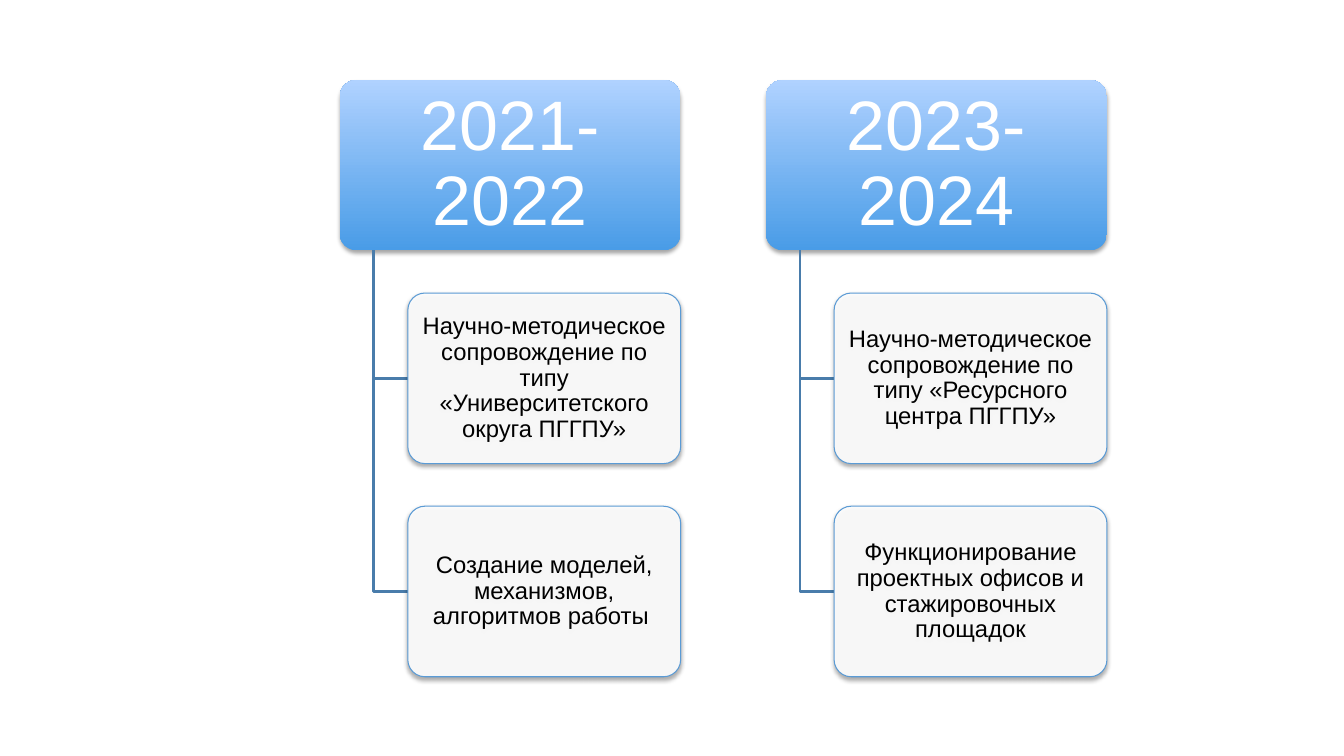
from lxml.etree import SubElement
from pptx import Presentation
from pptx.dml.color import RGBColor
from pptx.enum.shapes import MSO_SHAPE
from pptx.enum.text import MSO_ANCHOR, PP_ALIGN
from pptx.oxml.ns import qn
from pptx.util import Pt

COLORS = {
    "header_bottom": "499CE7",
    "header_top": "B0D2FF",
    "header_text": "FFFFFF",
    "card": "FFFFFF",
    "card_edge": "5B9BD5",
    "card_text": "000000",
    "branch": "497CAB",
    "shadow": "000000",
}
BOX_HEIGHT = 121.8
HEADER_WIDTH = 2 * BOX_HEIGHT
CARD_WIDTH = 1.6 * BOX_HEIGHT
ROW_STEP = 1.25 * BOX_HEIGHT
COLUMN_STEP = 2.5 * BOX_HEIGHT
LEFT, TOP = 242.6, 57.1

PERIODS = [
    ("2021-2022", [
        "Научно-методическое сопровождение по типу «Университетского округа ПГГПУ»",
        "Создание моделей, механизмов, алгоритмов работы ",
    ]),
    ("2023-2024", [
        "Научно-методическое сопровождение по типу «Ресурсного центра ПГГПУ»",
        "Функционирование проектных офисов и стажировочных площадок",
    ]),
]


def rgb(name):
    """Return the named palette colour."""
    return RGBColor.from_string(COLORS[name])


def set_alpha(color_element, percent):
    """Set the opacity of a colour element."""
    SubElement(color_element, qn("a:alpha"), val=str(percent * 1000))


def add_soft_shadow(shape):
    """Give a shape a soft shadow straight below it."""
    shape.shadow.inherit = False
    effects = shape._element.spPr.find(qn("a:effectLst"))
    shadow = SubElement(effects, qn("a:outerShdw"), blurRad=str(Pt(3.1)),
                        dist=str(Pt(1.8)), dir="5400000", rotWithShape="0")
    set_alpha(SubElement(shadow, qn("a:srgbClr"), val=COLORS["shadow"]), 35)


def write_text(shape, text, *, size, color, inset_x, inset_y):
    """Write centred text into a shape."""
    frame = shape.text_frame
    frame.word_wrap = True
    frame.vertical_anchor = MSO_ANCHOR.MIDDLE
    frame.margin_left = frame.margin_right = Pt(inset_x)
    frame.margin_top = frame.margin_bottom = Pt(inset_y)
    para = frame.paragraphs[0]
    para.alignment = PP_ALIGN.CENTER
    para.line_spacing = 0.9
    span = para.add_run()
    span.text = text
    span.font.name = "Arial"
    span.font.size = Pt(size)
    span.font.color.rgb = rgb(color)


def add_rounded_box(page, left, top, width):
    """Add a rounded rectangle of the common height."""
    box = page.shapes.add_shape(MSO_SHAPE.ROUNDED_RECTANGLE, Pt(left), Pt(top),
                                Pt(width), Pt(BOX_HEIGHT))
    box.adjustments[0] = 0.1
    add_soft_shadow(box)
    return box


def add_header(page, left, top, text):
    """Add the gradient box that names a period."""
    box = add_rounded_box(page, left, top, HEADER_WIDTH)
    box.fill.gradient()
    box.fill.gradient_angle = 90
    for stop, name in zip(box.fill.gradient_stops, ("header_bottom", "header_top")):
        stop.color.rgb = rgb(name)
    box.fill.gradient_stops[0].position = 0
    box.fill.gradient_stops[1].position = 1
    box.line.fill.background()
    write_text(box, text, size=50, color="header_text", inset_x=7.5, inset_y=5)


def add_card(page, left, top, text):
    """Add a white card that describes one task."""
    box = add_rounded_box(page, left, top, CARD_WIDTH)
    box.fill.solid()
    box.fill.fore_color.rgb = rgb("card")
    set_alpha(box._element.spPr.find(qn("a:solidFill"))[0], 90)
    box.line.color.rgb = rgb("card_edge")
    box.line.width = Pt(0.75)
    write_text(box, text, size=17, color="card_text", inset_x=2.55, inset_y=1.7)


def add_branch(page, left, top, right, bottom):
    """Add an elbow line going down and then right."""
    builder = page.shapes.build_freeform(Pt(left), Pt(top))
    builder.add_line_segments([(Pt(left), Pt(bottom)), (Pt(right), Pt(bottom))], close=False)
    elbow = builder.convert_to_shape()
    elbow.fill.background()
    elbow.line.color.rgb = rgb("branch")
    elbow.line.width = Pt(2)
    elbow.shadow.inherit = False


def add_period(page, left, top, title, tasks):
    """Add a period header with its tasks hanging below."""
    add_header(page, left, top, title)
    trunk = left + 0.1 * HEADER_WIDTH
    card_left = left + 0.2 * HEADER_WIDTH
    for row, task in enumerate(tasks, start=1):
        card_top = top + row * ROW_STEP
        add_branch(page, trunk, top + BOX_HEIGHT, card_left, card_top + BOX_HEIGHT / 2)
        add_card(page, card_left, card_top, task)


def main():
    """Build the deck and save it."""
    deck = Presentation()
    deck.slide_width, deck.slide_height = Pt(960), Pt(540)
    page = deck.slides.add_slide(deck.slide_layouts[6])
    for column, (title, tasks) in enumerate(PERIODS):
        add_period(page, LEFT + column * COLUMN_STEP, TOP, title, tasks)
    deck.save("out.pptx")


if __name__ == "__main__":
    main()
